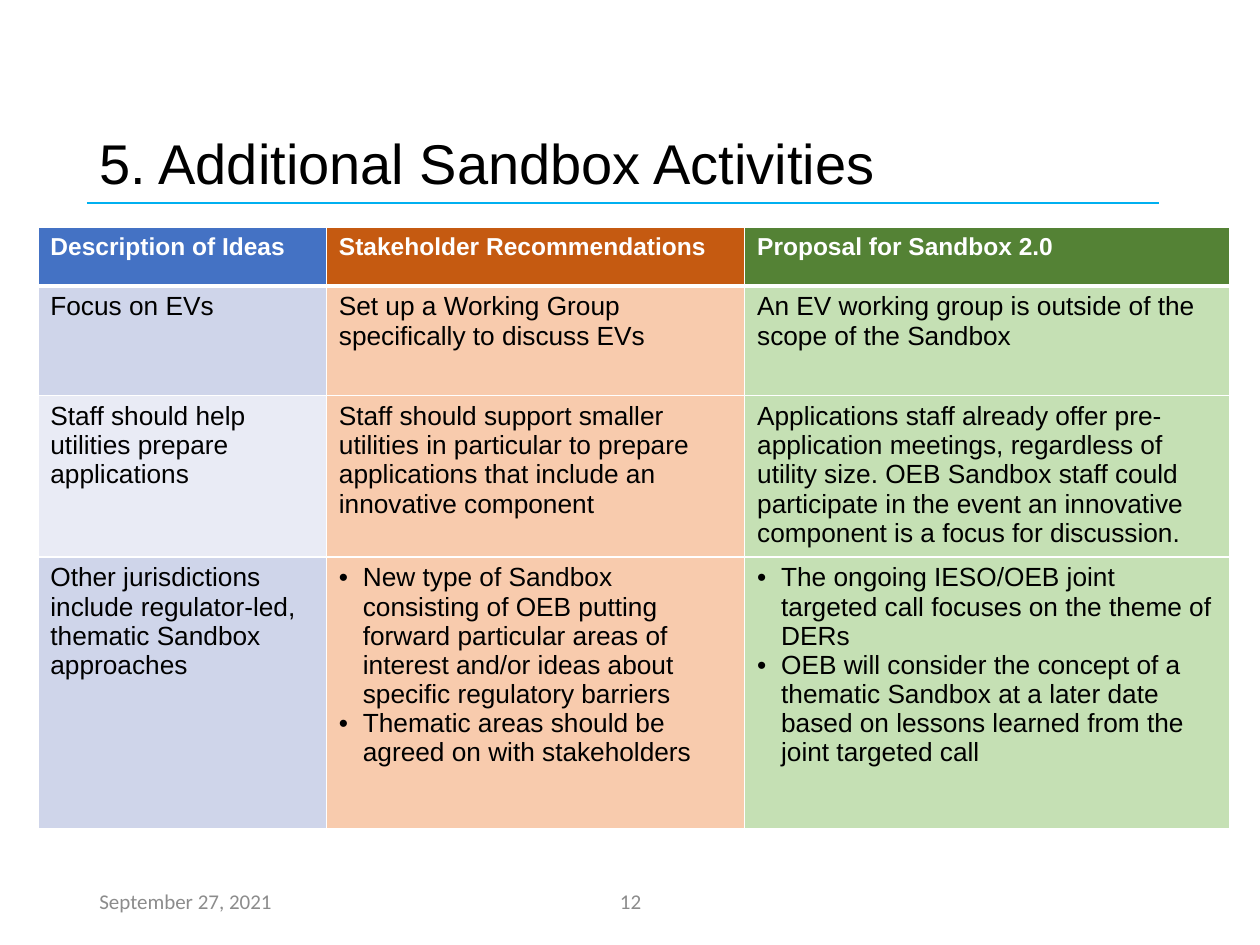
from lxml import etree
from pptx import Presentation
from pptx import util as u
from pptx.dml.color import RGBColor
from pptx.enum import shapes, text
from pptx.oxml.ns import qn

WHITE = RGBColor(0xFF, 0xFF, 0xFF)
BLACK = RGBColor(0, 0, 0)
GRAY = RGBColor(0x8C, 0x8C, 0x8C)
CYAN = RGBColor(0x00, 0xB0, 0xF0)
BLUE = RGBColor(0x44, 0x72, 0xC4)
RUST = RGBColor(0xC5, 0x5A, 0x11)
GREEN = RGBColor(0x54, 0x82, 0x35)
MIST = RGBColor(0xCF, 0xD5, 0xEA)
PALE = RGBColor(0xE9, 0xEB, 0xF5)
PEACH = RGBColor(0xF8, 0xCB, 0xAD)
LIME = RGBColor(0xC5, 0xE0, 0xB4)

LEFT = 0.69
COLS = [2.29, 3.32, 3.85]
ROWS = [0.47, 0.87, 1.28, 2.16]
FILLS = [(BLUE, RUST, GREEN), (MIST, PEACH, LIME),
         (PALE, PEACH, LIME), (MIST, PEACH, LIME)]
# A list inside a cell is a bulleted list.
CELLS = [
    ["Description of Ideas", "Stakeholder Recommendations", "Proposal for Sandbox 2.0"],
    ["Focus on EVs",
     "Set up a Working Group specifically to discuss EVs",
     "An EV working group is outside of the scope of the Sandbox"],
    ["Staff should help utilities prepare applications",
     "Staff should support smaller utilities in particular to prepare "
     "applications that include an innovative component",
     "Applications staff already offer pre-application meetings, regardless of "
     "utility size. OEB Sandbox staff could participate in the event an "
     "innovative component is a focus for discussion."],
    ["Other jurisdictions include regulator-led, thematic Sandbox approaches",
     ["New type of Sandbox consisting of OEB putting forward particular areas of "
      "interest and/or ideas about specific regulatory barriers",
      "Thematic areas should be agreed on with stakeholders"],
     ["The ongoing IESO/OEB joint targeted call focuses on the theme of DERs",
      "OEB will consider the concept of a thematic Sandbox at a later date based "
      "on lessons learned from the joint targeted call"]],
]


def style(para, name, size, color, bold=False):
    for run in para.runs:
        run.font.name = name
        run.font.size = u.Pt(size)
        run.font.color.rgb = color
        run.font.bold = bold


def label(box, words, anchor, align, name, size, color):
    """Add a one-paragraph text box and return its paragraph."""
    frame = slide.shapes.add_textbox(*map(u.Inches, box)).text_frame
    frame.word_wrap = True
    frame.vertical_anchor = anchor
    frame.text = words
    para = frame.paragraphs[0]
    para.alignment = align
    style(para, name, size, color)
    return para


deck = Presentation()
deck.slide_width, deck.slide_height = u.Inches(10), u.Inches(7.5)
slide = deck.slides.add_slide(deck.slide_layouts[6])

# Rule under the title
rule = slide.shapes.add_connector(
    shapes.MSO_CONNECTOR.STRAIGHT,
    u.Inches(LEFT), u.Inches(1.61), u.Inches(9.2), u.Inches(1.61))
rule.line.color.rgb = CYAN
rule.line.width = u.Pt(1.5)
etree.SubElement(rule._element.spPr, qn("a:effectLst"))

# Table of ideas
grid = slide.shapes.add_table(
    len(ROWS), len(COLS), u.Inches(0.3), u.Inches(1.8),
    u.Inches(sum(COLS)), u.Inches(sum(ROWS))).table
for col, width in zip(grid.columns, COLS):
    col.width = u.Inches(width)
for row, height in zip(grid.rows, ROWS):
    row.height = u.Inches(height)

for r, line in enumerate(CELLS):
    for c, words in enumerate(line):
        cell = grid.cell(r, c)
        # White borders, thick between header and body
        for side in "LRTB":
            thick = (r, side) in ((0, "B"), (1, "T"))
            edge = etree.SubElement(cell._tc.get_or_add_tcPr(), qn("a:ln" + side))
            edge.set("w", str(u.Pt(3 if thick else 1)))
            paint = etree.SubElement(edge, qn("a:solidFill"))
            etree.SubElement(paint, qn("a:srgbClr")).set("val", str(WHITE))
        cell.fill.solid()
        cell.fill.fore_color.rgb = FILLS[r][c]
        listed = isinstance(words, list)
        cell.text_frame.text = "\n".join(words) if listed else words
        for para in cell.text_frame.paragraphs:
            if listed:
                props = para._p.get_or_add_pPr()
                props.set("marL", str(u.Inches(0.19)))
                props.set("indent", str(-u.Inches(0.19)))
                etree.SubElement(props, qn("a:buFont")).set("typeface", "Arial")
                etree.SubElement(props, qn("a:buChar")).set("char", "•")
            if r == 0:
                style(para, "Arial", 14, WHITE, True)
            else:
                style(para, "Arial", 15, BLACK)

# Footer and title
MID, LOW = text.MSO_ANCHOR.MIDDLE, text.MSO_ANCHOR.BOTTOM
START, CENTER = text.PP_ALIGN.LEFT, text.PP_ALIGN.CENTER
label((LEFT, 6.95, 2.25, 0.4), "September 27, 2021", MID, START, "Calibri", 12, GRAY)
label((4.66, 6.95, 0.69, 0.4), "12", MID, CENTER, "Calibri", 12, GRAY)
title = label((LEFT, 0.16, 8.87, 1.45), "5. Additional Sandbox Activities",
              LOW, START, "Arial", 32, BLACK)
title.line_spacing = 0.9

deck.save("out.pptx")
